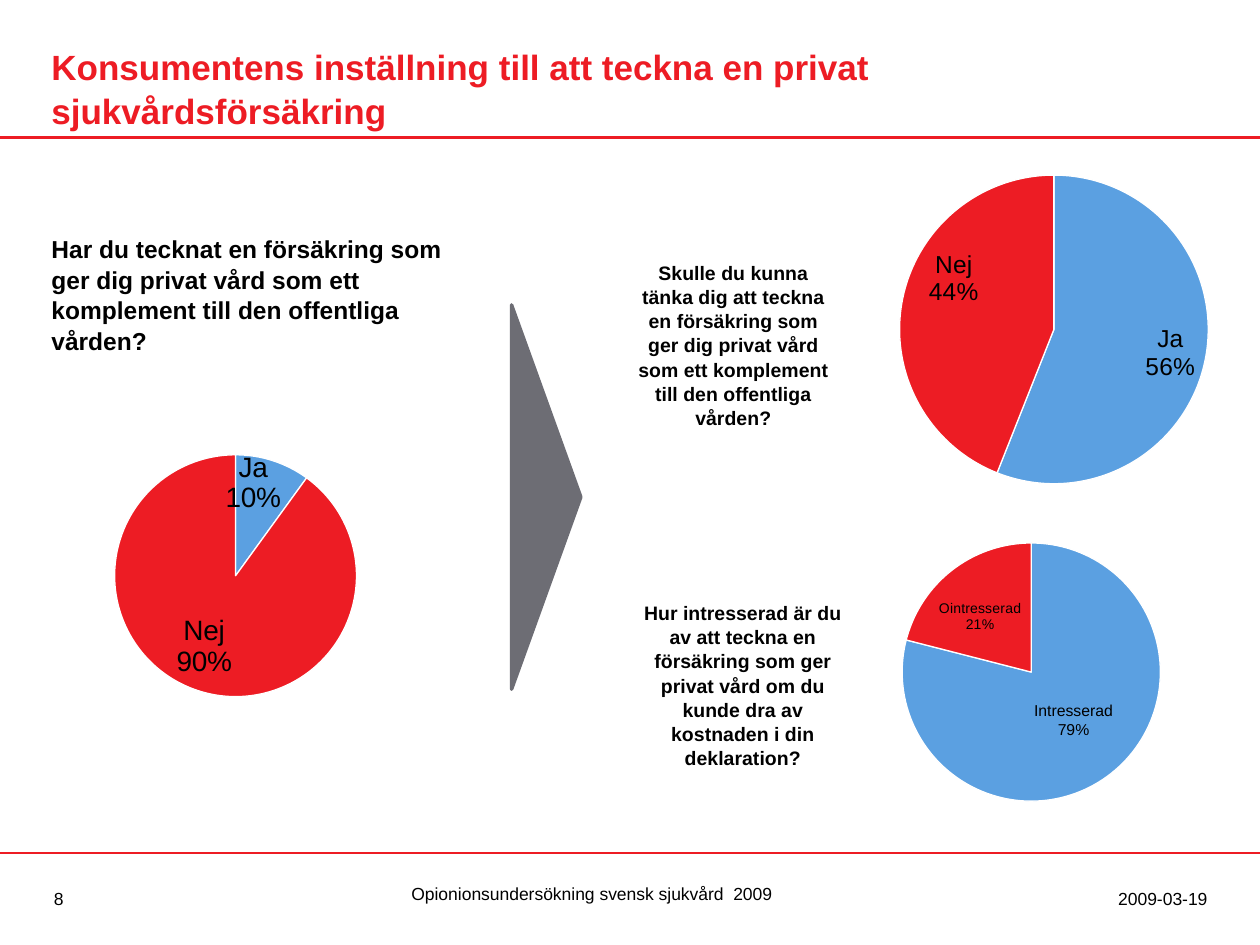
"""Build a slide of three pie charts on attitudes to private health insurance."""
from math import cos, pi, sin

from lxml.etree import SubElement
from pptx import Presentation
from pptx.chart.data import CategoryChartData
from pptx.dml.color import RGBColor
from pptx.enum.chart import XL_CHART_TYPE, XL_LABEL_POSITION
from pptx.enum.shapes import MSO_CONNECTOR, MSO_SHAPE
from pptx.enum.text import MSO_ANCHOR, PP_ALIGN
from pptx.oxml import parse_xml
from pptx.oxml.ns import nsdecls, qn
from pptx.util import Inches, Pt

RED, BLUE, GREY, BLACK, WHITE = "ED1C24", "5BA0E1", "6D6D74", "000000", "FFFFFF"


def color(value):
    return RGBColor.from_string(value)


def manual_layout(x, y, size=None):
    values = {"x": x, "y": y}
    modes = ""
    if size:
        modes = '<c:layoutTarget val="inner"/><c:xMode val="edge"/><c:yMode val="edge"/>'
        values.update(w=size[0], h=size[1])
    parts = "".join(f'<c:{key} val="{value:.4f}"/>' for key, value in values.items())
    return parse_xml(
        f'<c:layout {nsdecls("c")}><c:manualLayout>{modes}{parts}</c:manualLayout></c:layout>'
    )


deck = Presentation()
deck.slide_width, deck.slide_height = Inches(10), Inches(7.5)
page = deck.slides.add_slide(deck.slide_layouts[6])

for top in (6.77, 1.09):
    rule = page.shapes.add_connector(
        MSO_CONNECTOR.STRAIGHT, Inches(0), Inches(top), Inches(10), Inches(top)
    )
    rule.line.color.rgb = color(RED)
    rule.line.width = Pt(1.5)
    SubElement(rule._element.spPr, qn("a:effectLst"))

arrow = page.shapes.add_shape(
    MSO_SHAPE.ISOSCELES_TRIANGLE, Inches(2.81), Inches(3.67), Inches(3.05), Inches(0.55)
)
arrow.rotation = 90
arrow.shadow.inherit = False
arrow.fill.solid()
arrow.fill.fore_color.rgb = color(GREY)
arrow.line.color.rgb = color(GREY)
arrow.line.width = Pt(2)
SubElement(arrow.line._get_or_add_ln(), qn("a:round"))

# frame, plot left, plot top, diameter, slices of (name, value, label size, label centre)
pies = [
    ((-0.39, 2.97, 4.53, 3.2), (0.91, 3.61, 1.92),
     [("Ja", 10, 16, (2.01, 3.83)), ("Nej", 90, 16, (1.62, 5.13))]),
    ((6.41, 1.25, 3.48, 2.73), (7.14, 1.39, 2.45),
     [("Ja", 56, 14, (9.29, 2.8)), ("Nej", 44, 14, (7.57, 2.21))]),
    ((6.33, 3.98, 3.67, 2.73), (7.16, 4.31, 2.05),
     [("Intresserad", 79, 9, (8.52, 5.72)), ("Ointresserad", 21, 8, (7.78, 4.89))]),
]
for frame, (plot_left, plot_top, diameter), slices in pies:
    left, top, width, height = frame
    data = CategoryChartData()
    data.categories = [name for name, *rest in slices]
    data.add_series("Series 1", [value for name, value, *rest in slices])
    chart = page.shapes.add_chart(
        XL_CHART_TYPE.PIE, *(Inches(length) for length in frame), data
    ).chart
    chart.has_legend = chart.has_title = False
    chart.font.name, chart.font.size = "Arial", Pt(12)
    chart.font.color.rgb = color(BLACK)
    plot_area = chart._chartSpace.chart.plotArea
    for layout in plot_area.findall(qn("c:layout")):
        plot_area.remove(layout)
    plot_area.insert(0, manual_layout(
        (plot_left - left) / width, (plot_top - top) / height,
        (diameter / width, diameter / height),
    ))

    plot = chart.plots[0]
    plot.vary_by_categories = True
    series = plot.series[0]
    total = sum(value for name, value, *rest in slices)
    start = 0
    for index, (name, value, size, (label_x, label_y)) in enumerate(slices):
        point = series.points[index]
        point.format.fill.solid()
        point.format.fill.fore_color.rgb = color((BLUE, RED)[index])
        point.format.line.color.rgb = color(WHITE)
        point.format.line.width = Pt(0.75)
        label = point.data_label
        label.font.name, label.font.size = "Arial", Pt(size)
        label.font.color.rgb = color(BLACK)
        label.position = XL_LABEL_POSITION.CENTER

        angle = 2 * pi * (start + value / 2) / total
        start += value
        middle_x = plot_left + diameter / 2 + diameter / 4 * sin(angle)
        middle_y = plot_top + diameter / 2 - diameter / 4 * cos(angle)
        node = series._element.xpath(f"c:dLbls/c:dLbl[c:idx/@val='{index}']")[0]
        node.insert(1, manual_layout(
            (label_x - middle_x) / width, (label_y - middle_y) / height
        ))
        node.insert(2, parse_xml(
            f'<c:numFmt {nsdecls("c")} formatCode="0%" sourceLinked="0"/>'
        ))
        for tag, shown in (("showVal", "0"), ("showCatName", "1"), ("showPercent", "1")):
            node.find(qn(f"c:{tag}")).set("val", shown)
        SubElement(node, qn("c:separator")).text = "\n"
    for leader in series._element.xpath("c:dLbls/c:showLeaderLines"):
        leader.set("val", "0")

title = {"size": Pt(20), "bold": True}
lead = {"size": Pt(14), "bold": True}
question = {"size": Pt(11.1), "bold": True}
footer = {"size": Pt(10), "bold": False}
TOP, MIDDLE = MSO_ANCHOR.TOP, MSO_ANCHOR.MIDDLE
LEFT, CENTER, RIGHT = PP_ALIGN.LEFT, PP_ALIGN.CENTER, PP_ALIGN.RIGHT
texts = [
    ("Konsumentens inställning till att teckna en privat sjukvårdsförsäkring",
     (0.31, 0.3, 7.03, 0.45), title, RED, LEFT, TOP),
    ("Har du tecknat en försäkring som ger dig privat vård som ett komplement "
     "till den offentliga vården?",
     (0.31, 1.8, 3.44, 1.25), lead, BLACK, LEFT, TOP),
    ("Skulle du kunna tänka dig att teckna en försäkring som ger dig privat vård "
     "som ett komplement till den offentliga vården?",
     (4.92, 2.11, 1.8, 1.25), question, BLACK, CENTER, MIDDLE),
    ("Hur intresserad är du av att teckna en försäkring som ger privat vård om du "
     "kunde dra av kostnaden i din deklaration?",
     (4.92, 4.77, 1.95, 1.33), question, BLACK, CENTER, MIDDLE),
    ("8", (0.33, 6.99, 0.38, 0.27), footer, BLACK, LEFT, MIDDLE),
    ("Opionionsundersökning svensk sjukvård  2009",
     (2.34, 6.95, 4.71, 0.27), footer, BLACK, CENTER, MIDDLE),
    ("2009-03-19", (7.93, 6.99, 1.75, 0.27), footer, BLACK, RIGHT, MIDDLE),
]
for words, frame, style, ink, alignment, anchor in texts:
    box = page.shapes.add_textbox(*(Inches(length) for length in frame))
    box.text_frame.word_wrap = True
    box.text_frame.vertical_anchor = anchor
    para = box.text_frame.paragraphs[0]
    para.alignment = alignment
    para.line_spacing = 1.04
    span = para.add_run()
    span.text = words
    span.font.name = "Arial"
    span.font.color.rgb = color(ink)
    for key, value in style.items():
        setattr(span.font, key, value)

deck.save("out.pptx")
